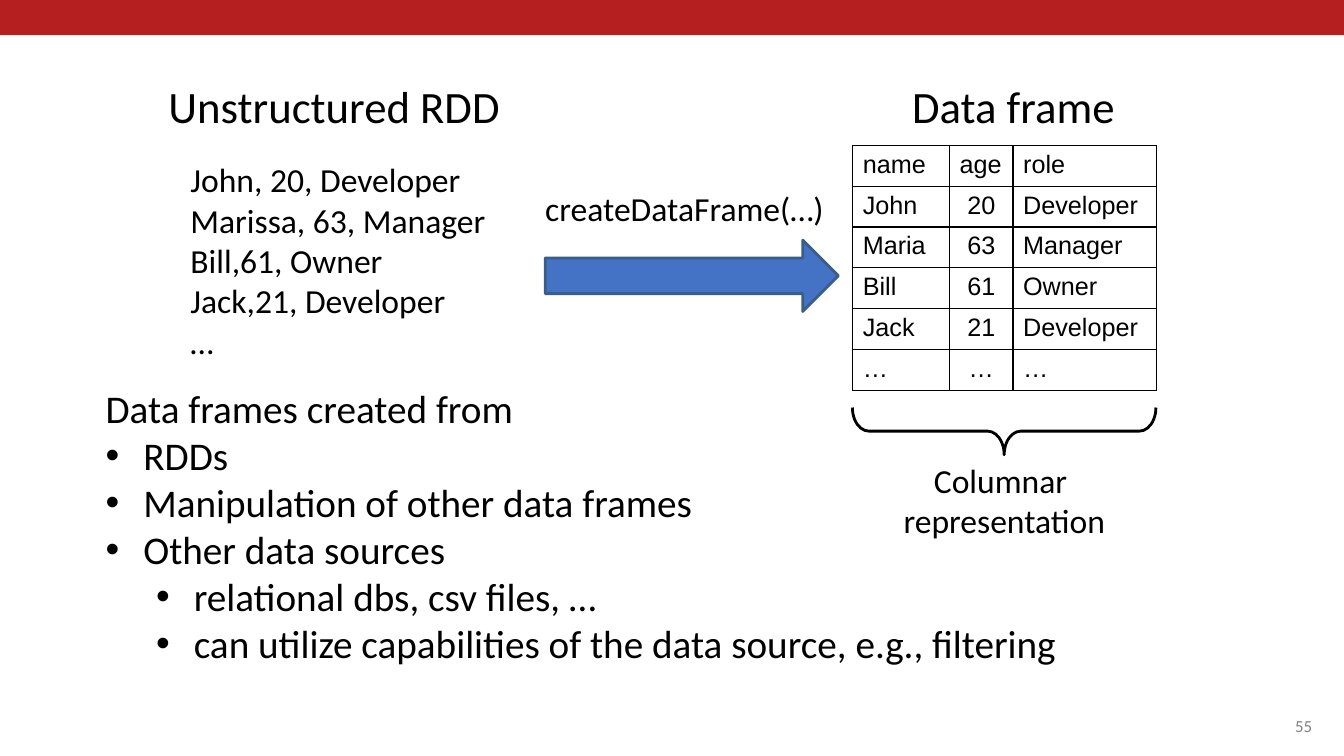
from lxml.etree import SubElement
from pptx import Presentation
from pptx.dml.color import RGBColor
from pptx.enum.shapes import MSO_SHAPE
from pptx.enum.text import MSO_ANCHOR, MSO_AUTO_SIZE, PP_ALIGN
from pptx.oxml import parse_xml
from pptx.oxml.ns import nsdecls, qn
from pptx.util import Cm, Pt

BLACK = "000000"
TITLE = "Unstructured RDD"
FRAME_TITLE = "Data frame"
RDD_LINES = [
    "John, 20, Developer",
    "Marissa, 63, Manager",
    "Bill,61, Owner",
    "Jack,21, Developer",
    "…",
]
FRAME_ROWS = [
    ("name", "age", "role"),
    ("John", "20", "Developer"),
    ("Maria", "63", "Manager"),
    ("Bill", "61", "Owner"),
    ("Jack", "21", "Developer"),
    ("…", "…", "…"),
]
COLUMN_WIDTHS = [2.44, 1.6, 3.61]
ROW_HEIGHT = 1.03
CALL_LABEL = "createDataFrame(…)"
BRACE_LABEL = ["Columnar ", "representation"]
SOURCES = [
    (None, "Data frames created from"),
    (0, "RDDs"),
    (0, "Manipulation of other data frames"),
    (0, "Other data sources"),
    (1, "relational dbs, csv files, …"),
    (1, "can utilize capabilities of the data source, e.g., filtering"),
]
SLIDE_NUMBER = "55"


def color(value):
    return RGBColor.from_string(value)


def place(shape, left, top, width, height):
    shape.left, shape.top = Cm(left), Cm(top)
    shape.width, shape.height = Cm(width), Cm(height)


def write(paragraph, text, size, align=PP_ALIGN.LEFT, font="Calibri", ink=BLACK):
    paragraph.alignment = align
    run = paragraph.add_run()
    run.text = text
    run.font.name = font
    run.font.size = Pt(size)
    run.font.bold = False
    run.font.color.rgb = color(ink)


def set_frame(shape, anchor=MSO_ANCHOR.TOP):
    frame = shape.text_frame
    frame.word_wrap = True
    frame.auto_size = MSO_AUTO_SIZE.NONE
    frame.vertical_anchor = anchor
    return frame


def next_paragraph(frame, index):
    return frame.add_paragraph() if index else frame.paragraphs[0]


def add_text(slide, box, lines, size, align=PP_ALIGN.LEFT, ink=BLACK, anchor=MSO_ANCHOR.TOP):
    shape = slide.shapes.add_textbox(*map(Cm, box))
    frame = set_frame(shape, anchor)
    for index, line in enumerate(lines):
        write(next_paragraph(frame, index), line, size, align, ink=ink)


def add_preset(slide, kind, box, fill=None, line=None):
    shape = slide.shapes.add_shape(kind, *map(Cm, box))
    shape.shadow.inherit = False
    if fill:
        shape.fill.solid()
        shape.fill.fore_color.rgb = color(fill)
    else:
        shape.fill.background()
    if line:
        shape.line.color.rgb = color(line)
        shape.line.width = Pt(2)
    else:
        shape.line.fill.background()
    return shape


def set_bullet(paragraph, level):
    properties = paragraph._p.get_or_add_pPr()
    if level is None:
        properties.set("marL", "0")
        properties.set("indent", "0")
        SubElement(properties, qn("a:buNone"))
        return
    paragraph.level = level
    properties.set("marL", str(Cm(0.95 + 1.27 * level)))
    properties.set("indent", str(Cm(-0.95)))
    bullet_color = SubElement(properties, qn("a:buClr"))
    SubElement(bullet_color, qn("a:srgbClr"), val=BLACK)
    SubElement(properties, qn("a:buFont"), typeface="Arial")
    SubElement(properties, qn("a:buChar"), char="•")


def set_borders(cell):
    properties = cell._tc.get_or_add_tcPr()
    for index, side in enumerate(("lnL", "lnR", "lnT", "lnB")):
        properties.insert(index, parse_xml(
            f'<a:{side} {nsdecls("a")} w="{Pt(1)}"><a:solidFill>'
            f'<a:srgbClr val="{BLACK}"/></a:solidFill></a:{side}>'))


def add_data_frame(slide, left, top):
    row_count = len(FRAME_ROWS)
    table = slide.shapes.add_table(
        row_count, len(COLUMN_WIDTHS), Cm(left), Cm(top),
        Cm(sum(COLUMN_WIDTHS)), Cm(ROW_HEIGHT * row_count)).table
    table.first_row = False
    table.horz_banding = False
    for column, width in zip(table.columns, COLUMN_WIDTHS):
        column.width = Cm(width)
    for row_index, values in enumerate(FRAME_ROWS):
        table.rows[row_index].height = Cm(ROW_HEIGHT)
        for column_index, value in enumerate(values):
            cell = table.cell(row_index, column_index)
            cell.fill.background()
            set_borders(cell)
            centred = row_index > 0 and column_index == 1
            align = PP_ALIGN.CENTER if centred else PP_ALIGN.LEFT
            write(cell.text_frame.paragraphs[0], value, 18, align, "Arial")


def main():
    presentation = Presentation()
    presentation.slide_width, presentation.slide_height = Cm(33.87), Cm(19.05)
    slide = presentation.slides.add_slide(presentation.slide_layouts[1])

    add_preset(slide, MSO_SHAPE.RECTANGLE, (0, 0, 33.87, 0.89), fill="B51F1F")

    title = slide.shapes.title
    place(title, 3.28, 1.85, 10.29, 3.53)
    write(set_frame(title).paragraphs[0], TITLE, 32, PP_ALIGN.CENTER)
    add_text(slide, (4.55, 3.89, 8.03, 5.38), RDD_LINES, 24)

    add_text(slide, (20.93, 1.85, 9.22, 3.53), [FRAME_TITLE], 32, PP_ALIGN.CENTER)
    add_preset(slide, MSO_SHAPE.RIGHT_ARROW, (13.74, 6.05, 7.39, 1.8), "4472C4", "395E89")
    add_text(slide, (13.49, 4.6, 7.65, 1.27), [CALL_LABEL], 24)
    add_data_frame(slide, 21.49, 3.66)

    brace = add_preset(slide, MSO_SHAPE.RIGHT_BRACE, (24.71, 7.04, 1.19, 7.65), line=BLACK)
    brace.rotation = 90
    brace.adjustments[0] = 0.35
    add_text(slide, (22.48, 11.46, 5.66, 2.31), BRACE_LABEL, 24, PP_ALIGN.CENTER)

    body = slide.placeholders[1]
    place(body, 2.41, 9.55, 24.66, 7.44)
    frame = set_frame(body)
    for index, (level, text) in enumerate(SOURCES):
        paragraph = next_paragraph(frame, index)
        set_bullet(paragraph, level)
        paragraph.space_before = Pt(0)
        write(paragraph, text, 28)

    add_text(slide, (24.28, 17.35, 9.04, 1.32), [SLIDE_NUMBER], 12,
             PP_ALIGN.RIGHT, "7F7F7F", MSO_ANCHOR.BOTTOM)
    presentation.save("out.pptx")


if __name__ == "__main__":
    main()
